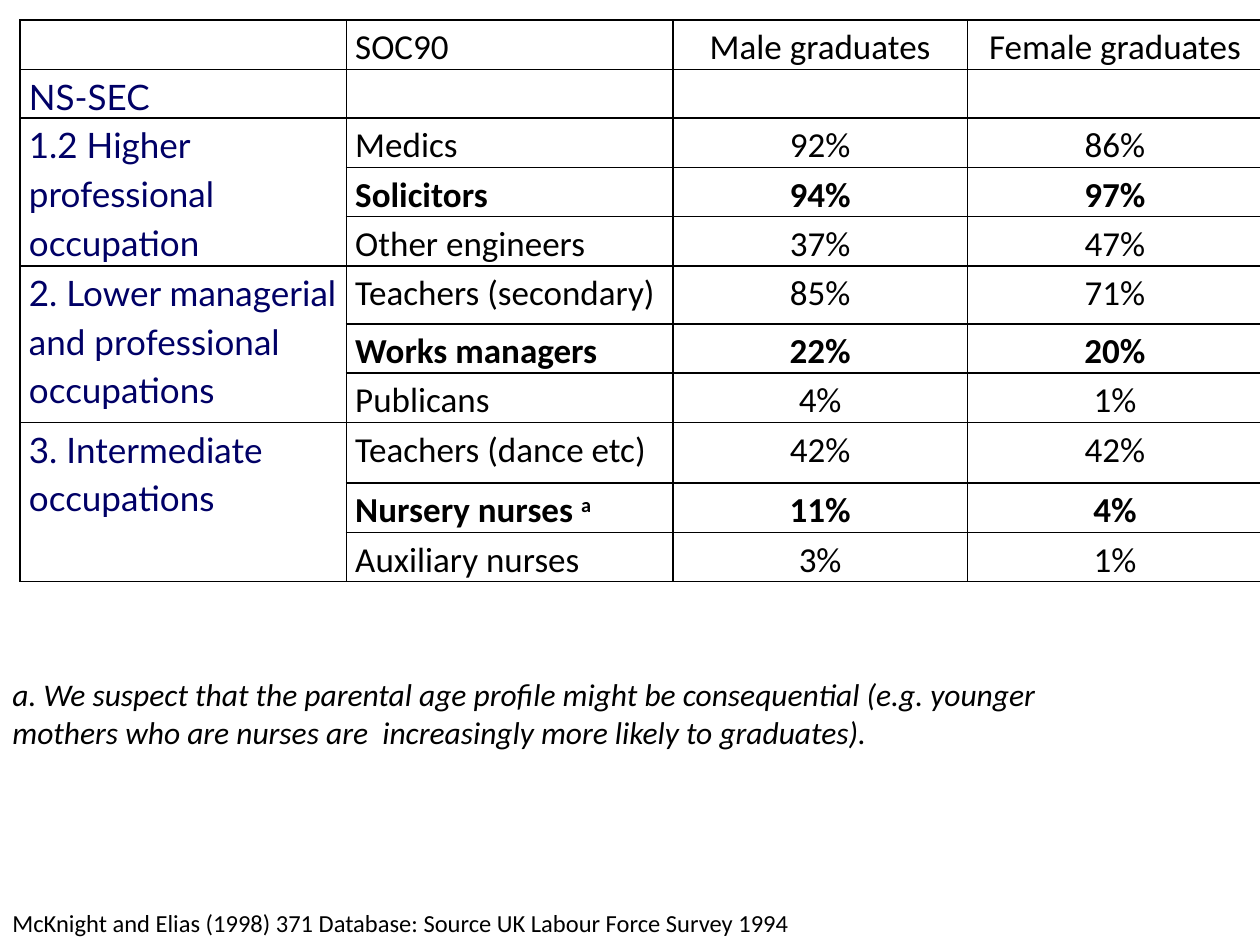
"""Build a slide with a table of graduates by occupation and two notes."""
from dataclasses import dataclass

from lxml.etree import SubElement
from pptx import Presentation
from pptx.dml.color import RGBColor
from pptx.enum.text import MSO_AUTO_SIZE as AutoSize, PP_ALIGN as Align
from pptx.oxml.ns import qn
from pptx.util import Inches, Pt

BLACK = RGBColor(0x00, 0x00, 0x00)
NAVY = RGBColor(0x00, 0x00, 0x66)
BODY_FONT, CLASS_FONT = "Calibri", "Lato"
COLUMN_WIDTHS = (2.59, 2.59, 2.34, 2.34)
ROW_HEIGHT = 0.35
TALL_ROWS = {5: 0.46, 8: 0.48}
FIRST_GROUP_ROW = 2
HEADINGS = ("SOC90", "Male graduates", "Female graduates")


@dataclass(frozen=True)
class Occupation:
    name: str
    male: int
    female: int
    bold: bool = False
    mark: str = ""


@dataclass(frozen=True)
class Group:
    name: str
    occupations: tuple[Occupation, ...]


@dataclass(frozen=True)
class Note:
    text: str
    top: float
    width: float
    height: float
    size: int
    italic: bool = False


GROUPS = (
    Group("1.2 Higher professional occupation", (
        Occupation("Medics", 92, 86),
        Occupation("Solicitors", 94, 97, bold=True),
        Occupation("Other engineers", 37, 47))),
    Group("2. Lower managerial and professional occupations", (
        Occupation("Teachers (secondary)", 85, 71),
        Occupation("Works managers", 22, 20, bold=True),
        Occupation("Publicans", 4, 1))),
    Group("3. Intermediate occupations", (
        Occupation("Teachers (dance etc)", 42, 42),
        Occupation("Nursery nurses ", 11, 4, bold=True, mark="a"),
        Occupation("Auxiliary nurses", 3, 1))),
)
NOTES = (
    Note("McKnight and Elias (1998) 371 Database: Source UK Labour Force Survey 1994",
         7.16, 9.38, 0.34, 14),
    Note("a. We suspect that the parental age profile might be consequential "
         "(e.g. younger mothers who are nurses are  increasingly more likely to graduates).",
         5.31, 8.91, 0.71, 18, italic=True),
)


def style_font(font, size: int, name: str = BODY_FONT, color: RGBColor = BLACK) -> None:
    """Set the size, typeface and colour of a font."""
    font.size, font.name = Pt(size), name
    font.color.rgb = color


def frame_cell(cell) -> None:
    """Give a cell its margins, black borders and no fill."""
    cell.margin_left = cell.margin_right = Inches(0.07)
    cell.margin_top = cell.margin_bottom = 0
    properties = cell._tc.get_or_add_tcPr()
    for side in ("lnL", "lnR", "lnT", "lnB"):
        border = SubElement(properties, qn(f"a:{side}"), w=str(Pt(1)))
        SubElement(SubElement(border, qn("a:solidFill")), qn("a:srgbClr"), val=str(BLACK))
    cell.fill.background()


def write_cell(table, row: int, column: int, text: str, bold: bool = False, mark: str = "") -> None:
    """Write a cell in the style of its column, with an optional superscript mark."""
    para = table.cell(row, column).text_frame.paragraphs[0]
    para.line_spacing = 1.15
    if column == 0:
        style_font(para.font, 20, CLASS_FONT, NAVY)
    else:
        style_font(para.font, 20)
    para.font.bold = bold
    if column > 1:
        para.alignment = Align.CENTER
    para.add_run().text = text
    if mark:
        span = para.add_run()
        span.text = mark
        span._r.get_or_add_rPr().set("baseline", "30000")


def add_occupation_table(page) -> None:
    """Add the table of graduates, one merged class cell per group."""
    row_count = FIRST_GROUP_ROW + sum(len(group.occupations) for group in GROUPS)
    heights = [TALL_ROWS.get(row, ROW_HEIGHT) for row in range(row_count)]
    table = page.shapes.add_table(
        row_count, len(COLUMN_WIDTHS), Inches(0.16), Inches(0.16),
        Inches(sum(COLUMN_WIDTHS)), Inches(sum(heights))).table
    table.first_row = table.horz_banding = False
    for column, width in zip(table.columns, COLUMN_WIDTHS):
        column.width = Inches(width)
    for row, height in zip(table.rows, heights):
        row.height = Inches(height)
    for cell in table.iter_cells():
        frame_cell(cell)

    for column, heading in enumerate(HEADINGS, start=1):
        write_cell(table, 0, column, heading)
    write_cell(table, 1, 0, "NS-SEC")
    top = FIRST_GROUP_ROW
    for group in GROUPS:
        bottom = top + len(group.occupations) - 1
        table.cell(top, 0).merge(table.cell(bottom, 0))
        write_cell(table, top, 0, group.name)
        for row, job in enumerate(group.occupations, start=top):
            write_cell(table, row, 1, job.name, job.bold, job.mark)
            write_cell(table, row, 2, f"{job.male}%", job.bold)
            write_cell(table, row, 3, f"{job.female}%", job.bold)
        top = bottom + 1


def add_note(page, note: Note) -> None:
    """Add a note at the left edge of the page."""
    box = page.shapes.add_textbox(0, Inches(note.top), Inches(note.width), Inches(note.height))
    frame = box.text_frame
    frame.word_wrap = True
    frame.auto_size = AutoSize.SHAPE_TO_FIT_TEXT
    para = frame.paragraphs[0]
    style_font(para.font, note.size)
    para.font.italic = note.italic
    para.add_run().text = note.text


def main() -> None:
    """Build and save the deck."""
    deck = Presentation()
    deck.slide_width, deck.slide_height = Inches(10), Inches(7.5)
    page = deck.slides.add_slide(deck.slide_layouts[6])
    add_occupation_table(page)
    for note in NOTES:
        add_note(page, note)
    deck.save("out.pptx")


if __name__ == "__main__":
    main()
